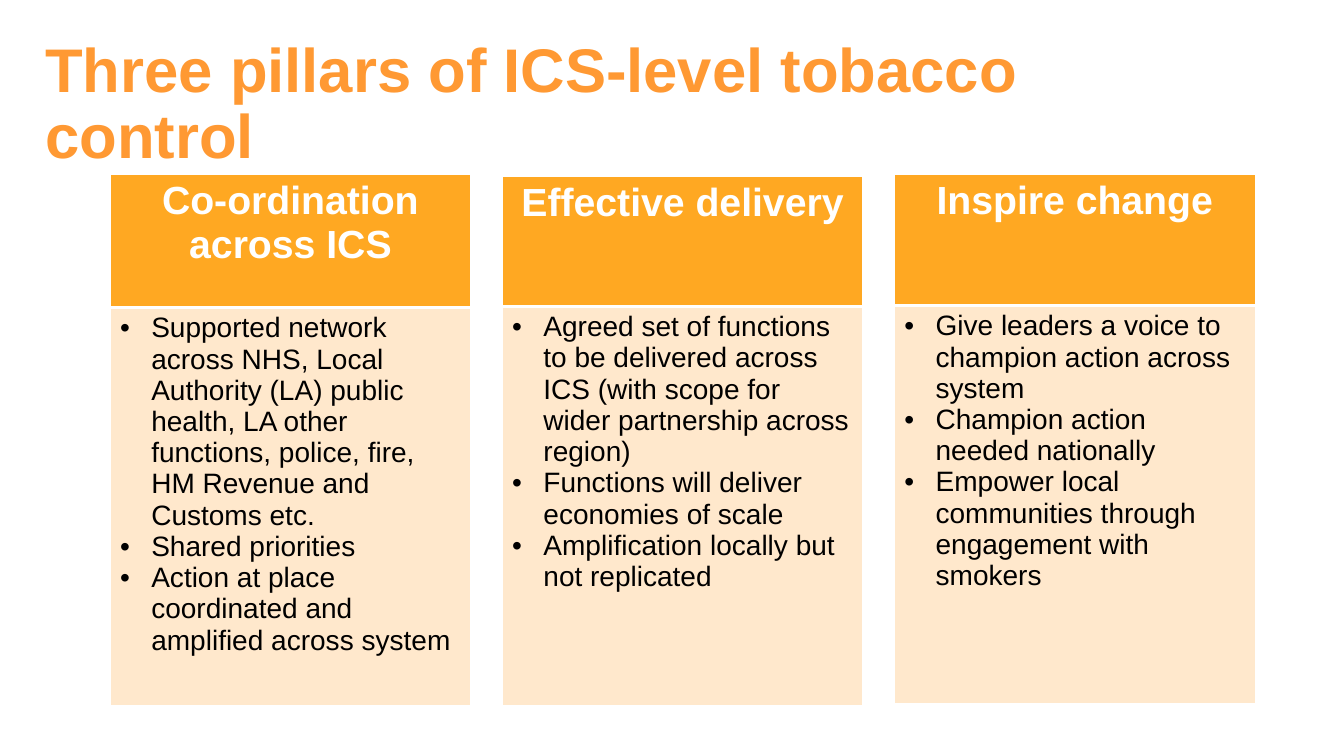
from dataclasses import dataclass

from lxml import etree
from pptx import Presentation
from pptx import util as u
from pptx.dml.color import RGBColor
from pptx.enum import text
from pptx.oxml import ns

COLUMN = u.Inches(13.33) / 100
ROW = u.Inches(7.5) / 100
FIRST_PILLAR = 8.18
PILLAR_STEP = 29.18
PILLAR_WIDTH = 26.85
BULLET_INDENT = u.Inches(0.31)
FONT = "Arial"
WHITE = "FFFFFF"


@dataclass
class Pillar:
    heading: str
    points: list[str]
    top: float
    heading_rows: float
    body_rows: float


PILLARS = [
    Pillar(
        "Co-ordination across ICS",
        [
            "Supported network across NHS, Local Authority (LA) public health, "
            "LA other functions, police, fire, HM Revenue and Customs etc.",
            "Shared priorities",
            "Action at place coordinated and amplified across system",
        ],
        23.07, 17.6, 52.67,
    ),
    Pillar(
        "Effective delivery",
        [
            "Agreed set of functions to be delivered across ICS "
            "(with scope for wider partnership across region)",
            "Functions will deliver economies of scale",
            "Amplification locally but not replicated",
        ],
        23.33, 17.2, 52.8,
    ),
    Pillar(
        "Inspire change",
        [
            "Give leaders a voice to champion action across system",
            "Champion action needed nationally",
            "Empower local communities through engagement with smokers",
        ],
        23.07, 17.33, 52.67,
    ),
]


def across(columns: float) -> int:
    return round(columns * COLUMN)


def down(rows: float) -> int:
    return round(rows * ROW)


def colour(value: str) -> RGBColor:
    return RGBColor.from_string(value)


def write(para, words: str, *, size: float, fill: str, bold: bool = False,
          align=text.PP_ALIGN.LEFT) -> None:
    para.alignment = align
    span = para.add_run()
    span.text = words
    span.font.name = FONT
    span.font.size = u.Pt(size)
    span.font.bold = bold
    span.font.color.rgb = colour(fill)


def add_bullet(para) -> None:
    properties = para._p.get_or_add_pPr()
    properties.set("marL", str(BULLET_INDENT))
    properties.set("indent", str(-BULLET_INDENT))
    etree.SubElement(properties, ns.qn("a:buFont"), typeface=FONT)
    etree.SubElement(properties, ns.qn("a:buChar"), char="•")


def style_cell(cell, fill: str, top: float, bottom: float) -> None:
    cell.fill.solid()
    cell.fill.fore_color.rgb = colour(fill)
    properties = cell._tc.get_or_add_tcPr()
    sides = {"a:lnL": 1, "a:lnR": 1, "a:lnT": top, "a:lnB": bottom}
    for place, (side, width) in enumerate(sides.items()):
        border = etree.Element(ns.qn(side), w=str(u.Pt(width)))
        solid = etree.SubElement(border, ns.qn("a:solidFill"))
        etree.SubElement(solid, ns.qn("a:srgbClr"), val=WHITE)
        properties.insert(place, border)


def add_title(page, words: str) -> None:
    box = page.shapes.title
    box.left, box.top = across(2.63), down(4.27)
    box.width, box.height = across(86.27), down(19.33)
    frame = box.text_frame
    frame.word_wrap = True
    frame.auto_size = text.MSO_AUTO_SIZE.NONE
    frame.vertical_anchor = text.MSO_ANCHOR.MIDDLE
    para = frame.paragraphs[0]
    para.line_spacing = 0.9
    write(para, words, size=44, fill="FF9933", bold=True)


def add_pillar(page, pillar: Pillar, left: float) -> None:
    table = page.shapes.add_table(
        2, 1, across(left), down(pillar.top), across(PILLAR_WIDTH),
        down(pillar.heading_rows + pillar.body_rows),
    ).table
    table.horz_banding = False
    table.rows[0].height = down(pillar.heading_rows)
    table.rows[1].height = down(pillar.body_rows)
    heading, body = table.cell(0, 0), table.cell(1, 0)
    style_cell(heading, "FFA822", top=1, bottom=3)
    style_cell(body, "FFE8CC", top=3, bottom=1)
    write(heading.text_frame.paragraphs[0], pillar.heading, size=28,
          fill=WHITE, bold=True, align=text.PP_ALIGN.CENTER)
    frame = body.text_frame
    for number, point in enumerate(pillar.points):
        para = frame.add_paragraph() if number else frame.paragraphs[0]
        add_bullet(para)
        write(para, point, size=20, fill="000000")


def main() -> None:
    deck = Presentation()
    deck.slide_width, deck.slide_height = across(100), down(100)
    page = deck.slides.add_slide(deck.slide_layouts[5])
    add_title(page, "Three pillars of ICS-level tobacco control")
    for number, pillar in enumerate(PILLARS):
        add_pillar(page, pillar, FIRST_PILLAR + number * PILLAR_STEP)
    deck.save("out.pptx")


if __name__ == "__main__":
    main()
